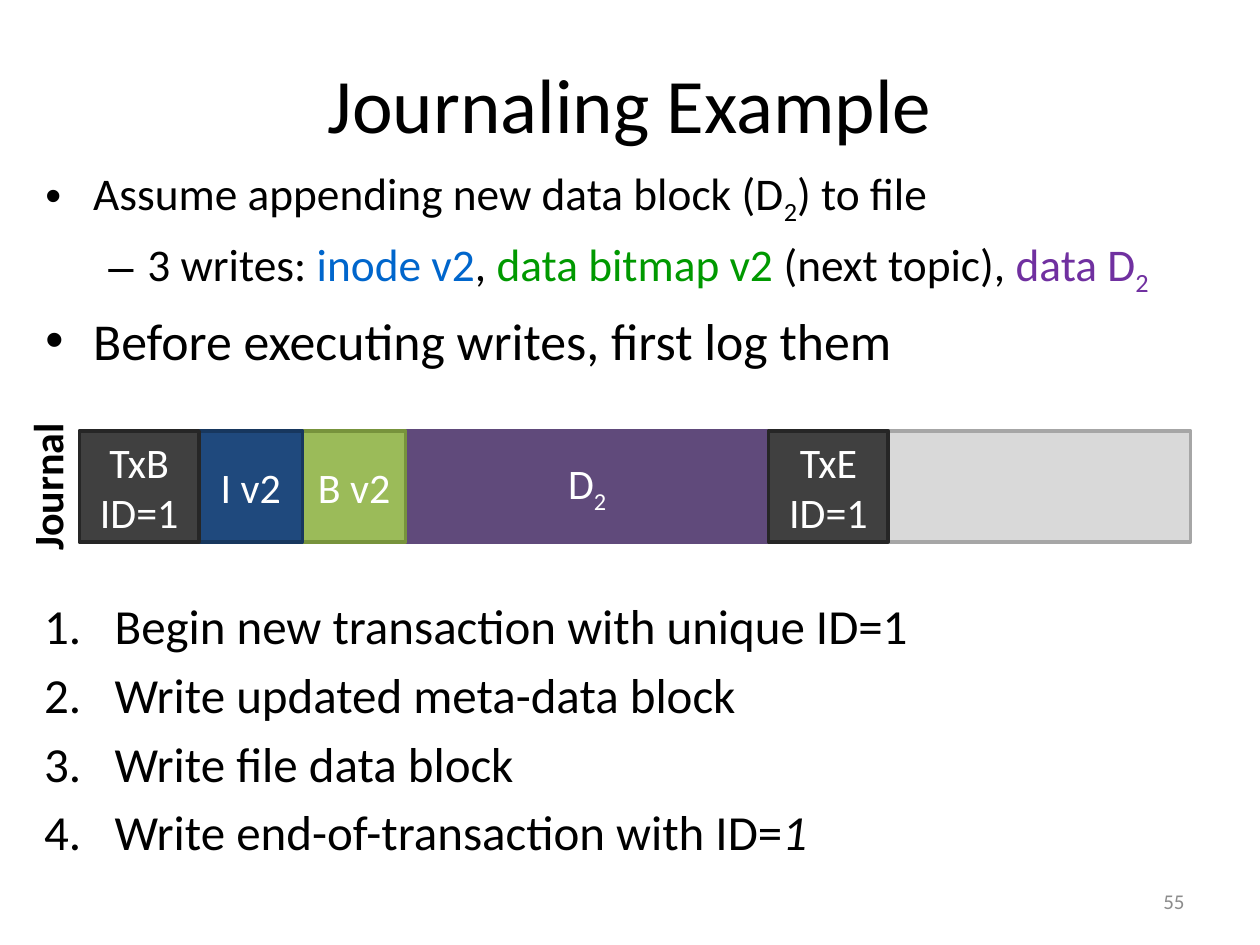
from lxml.etree import SubElement as Sub
from pptx import Presentation
from pptx.dml.color import RGBColor
from pptx.enum.shapes import MSO_SHAPE as Shape
from pptx.enum.text import MSO_ANCHOR as Anchor, MSO_AUTO_SIZE as Fit, PP_ALIGN as Align
from pptx.oxml.ns import qn
from pptx.util import Inches, Pt

BLACK, WHITE = "000000", "FFFFFF"
BLUE, GREEN, PURPLE = "0066CC", "009900", "7030A0"


def rgb(code):
    """Turn a hex string into a colour."""
    return RGBColor.from_string(code)


def place(item, box):
    """Move and size a shape to a box in inches."""
    item.left, item.top, item.width, item.height = map(Inches, box)


def style(run, size, color=BLACK):
    """Give a run its font, size and colour."""
    run.font.name = "Calibri"
    run.font.size = Pt(size)
    run.font.color.rgb = rgb(color)


def lower(run):
    """Make a run a subscript."""
    run.font._element.set("baseline", "-25000")


def write(para, size, parts):
    """Add runs of text and colour, where a leading underscore lowers a run."""
    for text, color in parts:
        run = para.add_run()
        run.text = text.lstrip("_")
        style(run, size, color)
        if text.startswith("_"):
            lower(run)


def indent(para, left, hang):
    """Set a hanging indent in inches and return the properties."""
    props = para._p.get_or_add_pPr()
    props.set("marL", str(Inches(left)))
    props.set("indent", str(-Inches(hang)))
    return props


def add_title(hold, box):
    """Fill the title placeholder."""
    place(hold, box)
    frame = hold.text_frame
    frame.text = "Journaling Example"
    frame.auto_size = Fit.NONE
    frame.vertical_anchor = Anchor.MIDDLE
    para = frame.paragraphs[0]
    para.alignment = Align.CENTER
    style(para.runs[0], 44)


def add_points(hold, box):
    """Fill the bulleted list above the journal."""
    rows = [
        (0, 25.9, [("Assume appending new data block (D", BLACK), ("_2", BLACK),
                   (") to file", BLACK)]),
        (1, 25.9, [("3 writes: ", BLACK), ("inode v2", BLUE), (", ", BLACK),
                   ("data bitmap v2 ", GREEN), ("(next topic), ", BLACK),
                   ("data D", PURPLE), ("_2", PURPLE)]),
        (0, 29.6, [("Before executing writes, first log them", BLACK)]),
    ]
    place(hold, box)
    frame = hold.text_frame
    frame.auto_size = Fit.NONE
    for num, (level, size, parts) in enumerate(rows):
        para = frame.add_paragraph() if num else frame.paragraphs[0]
        para.level = level
        props = indent(para, *((0.81, 0.31) if level else (0.38, 0.38)))
        Sub(props, qn("a:buChar"), char="–" if level else "•")
        write(para, size, parts)


def add_steps(hold, box):
    """Fill the numbered list below the journal."""
    place(hold, box)
    frame = hold.text_frame
    frame.auto_size = Fit.NONE
    frame.text = "\n".join([
        "Begin new transaction with unique ID=1",
        "Write updated meta-data block",
        "Write file data block",
        "Write end-of-transaction with ID=",
    ])
    last = frame.paragraphs[-1].add_run()
    last.text = "1"
    last.font.italic = True
    for para in frame.paragraphs:
        props = indent(para, 0.56, 0.56)
        Sub(props, qn("a:buAutoNum"), type="arabicPeriod")
        for run in para.runs:
            style(run, 28)


def add_block(slide, box, fill, line, text=""):
    """Draw one block of the journal."""
    block = slide.shapes.add_shape(Shape.RECTANGLE, *map(Inches, box))
    block.shadow.inherit = False
    block.fill.solid()
    block.fill.fore_color.rgb = rgb(fill)
    block.line.color.rgb = rgb(line)
    block.line.width = Pt(2)
    frame = block.text_frame
    frame.vertical_anchor = Anchor.MIDDLE
    if text:
        frame.text = text
    for para in frame.paragraphs:
        para.alignment = Align.CENTER
        for run in para.runs:
            style(run, 24, WHITE)
    return block


def add_label(slide, box):
    """Write the upright name of the journal."""
    label = slide.shapes.add_textbox(*map(Inches, box))
    label.rotation = 270
    frame = label.text_frame
    frame.word_wrap = False
    frame.text = "Journal"
    run = frame.paragraphs[0].runs[0]
    style(run, 24)
    run.font.bold = True


def add_journal(slide, box):
    """Draw the journal bar with its blocks laid end to end."""
    left, top, _, high = box
    dark = ("404040", "262626")
    blocks = [
        (0.95, *dark, "TxB\nID=1"),
        (0.82, "1F497D", "17375E", "I v2"),
        (0.82, "9BBB59", "77933C", "B v2"),
        (2.88, "604A7B", "604A7B", "D"),
        (0.95, *dark, "TxE\nID=1"),
    ]
    add_block(slide, box, "D9D9D9", "A6A6A6")
    add_label(slide, (left - 0.87, top + 0.19, 1.22, 0.5))
    spots = [left + sum(item[0] for item in blocks[:num]) for num in range(len(blocks))]
    order = [3, 2, 1, 0, 4]
    for num in order:
        wide, fill, line, text = blocks[num]
        block = add_block(slide, (spots[num], top, wide, high), fill, line, text)
        if text == "D":
            write(block.text_frame.paragraphs[0], 24, [("_2", WHITE)])


def add_number(slide, box):
    """Write the slide number."""
    frame = slide.shapes.add_textbox(*map(Inches, box)).text_frame
    frame.word_wrap = True
    frame.vertical_anchor = Anchor.MIDDLE
    frame.text = "55"
    para = frame.paragraphs[0]
    para.alignment = Align.RIGHT
    style(para.runs[0], 12, "8C8C8C")


def main():
    """Build the slide and save it."""
    deck = Presentation()
    deck.slide_width, deck.slide_height = Inches(10), Inches(7.5)
    slide = deck.slides.add_slide(deck.slide_layouts[3])
    title, points, steps = slide.placeholders
    add_title(title, (0.5, 0.3, 9, 1.03))
    add_points(points, (0.26, 1.26, 9.49, 1.98))
    add_number(slide, (7.17, 6.95, 2.33, 0.4))
    add_journal(slide, (0.63, 3.42, 8.82, 0.88))
    add_steps(steps, (0.25, 4.68, 9.49, 2.77))
    deck.save("out.pptx")


if __name__ == "__main__":
    main()
